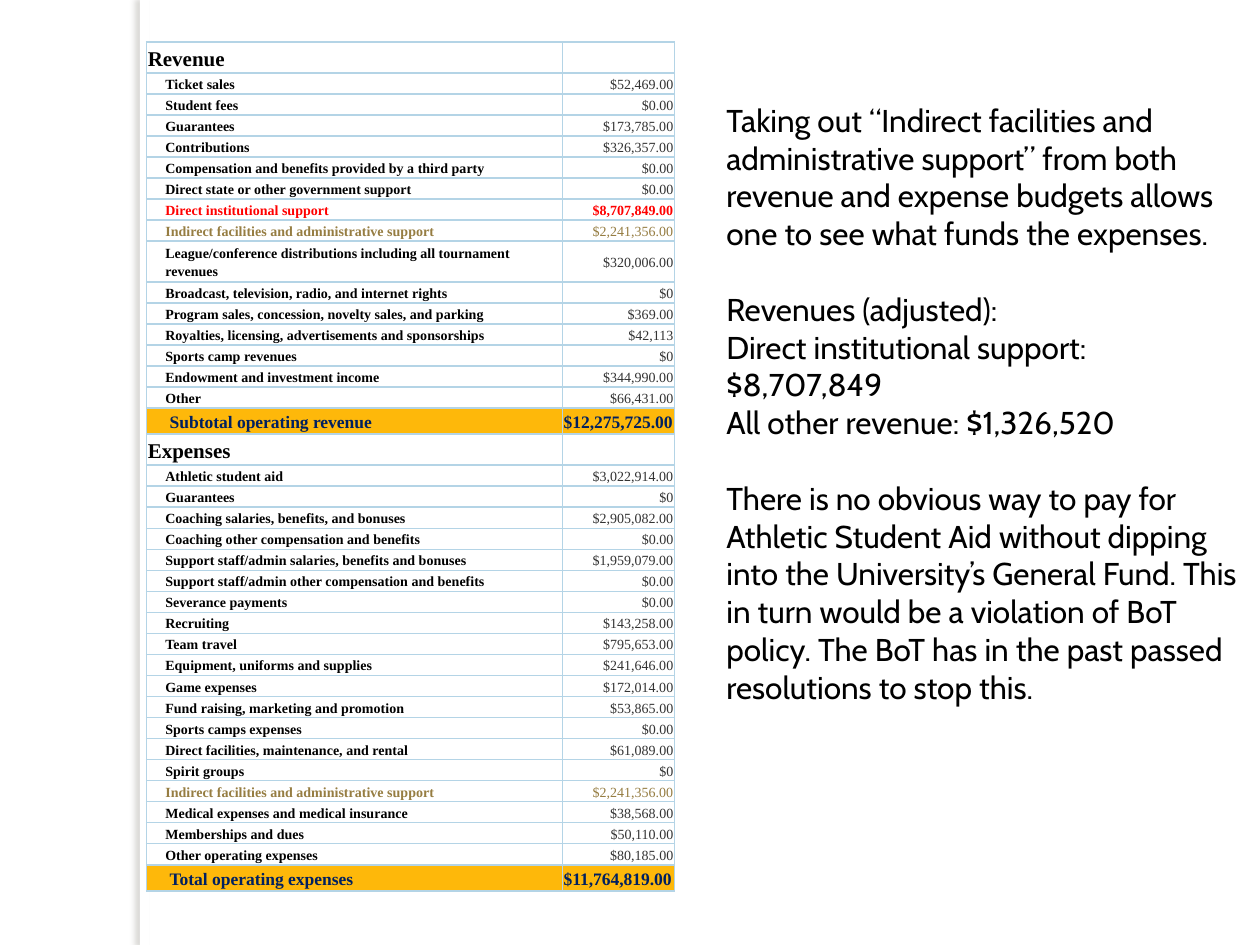
from lxml import etree
from pptx import Presentation
from pptx.dml.color import RGBColor
from pptx.enum.shapes import MSO_SHAPE
from pptx.enum.text import MSO_ANCHOR, PP_ALIGN
from pptx.oxml import parse_xml
from pptx.oxml.ns import qn
from pptx.util import Pt

RECTANGLE = MSO_SHAPE.RECTANGLE
MIDDLE = MSO_ANCHOR.MIDDLE
LEFT, RIGHT = PP_ALIGN.LEFT, PP_ALIGN.RIGHT

WHITE = RGBColor(0xFF, 0xFF, 0xFF)
BLACK = RGBColor(0, 0, 0)
GRAY = RGBColor(0x33, 0x33, 0x33)
RED = RGBColor(0xFF, 0, 0)
TAN = RGBColor(0x96, 0x7D, 0x42)
NAVY = RGBColor(0, 0x20, 0x60)
GOLD = RGBColor(0xFE, 0xB8, 0x0A)
PALE_BLUE = RGBColor(0xB4, 0xD4, 0xE6)
SHADOW = RGBColor(0x73, 0x6F, 0x63)
DRAWING_NS = "http://schemas.openxmlformats.org/drawingml/2006/main"

DIRECT = "Direct institutional support"
INDIRECT = "Indirect facilities and administrative support"

# Each section: heading, items, total
SECTIONS = [
    ("Revenue", [
        ("Ticket sales", "$52,469.00"),
        ("Student fees", "$0.00"),
        ("Guarantees", "$173,785.00"),
        ("Contributions", "$326,357.00"),
        ("Compensation and benefits provided by a third party", "$0.00"),
        ("Direct state or other government support", "$0.00"),
        (DIRECT, "$8,707,849.00"),
        (INDIRECT, "$2,241,356.00"),
        ("League/conference distributions including all tournament\nrevenues", "$320,006.00"),
        ("Broadcast, television, radio, and internet rights", "$0"),
        ("Program sales, concession, novelty sales, and parking", "$369.00"),
        ("Royalties, licensing, advertisements and sponsorships", "$42,113"),
        ("Sports camp revenues", "$0"),
        ("Endowment and investment income", "$344,990.00"),
        ("Other", "$66,431.00"),
    ], ("Subtotal operating revenue", "$12,275,725.00")),
    ("Expenses", [
        ("Athletic student aid", "$3,022,914.00"),
        ("Guarantees", "$0"),
        ("Coaching salaries, benefits, and bonuses", "$2,905,082.00"),
        ("Coaching other compensation and benefits", "$0.00"),
        ("Support staff/admin salaries, benefits and bonuses", "$1,959,079.00"),
        ("Support staff/admin other compensation and benefits", "$0.00"),
        ("Severance payments", "$0.00"),
        ("Recruiting", "$143,258.00"),
        ("Team travel", "$795,653.00"),
        ("Equipment, uniforms and supplies", "$241,646.00"),
        ("Game expenses", "$172,014.00"),
        ("Fund raising, marketing and promotion", "$53,865.00"),
        ("Sports camps expenses", "$0.00"),
        ("Direct facilities, maintenance, and rental", "$61,089.00"),
        ("Spirit groups", "$0"),
        (INDIRECT, "$2,241,356.00"),
        ("Medical expenses and medical insurance", "$38,568.00"),
        ("Memberships and dues", "$50,110.00"),
        ("Other operating expenses", "$80,185.00"),
    ], ("Total operating expenses", "$11,764,819.00")),
]

# Text and whether a gap of one line precedes it
COMMENTARY = [
    ("Taking out “Indirect facilities and administrative support” from both revenue "
     "and expense budgets allows one to see what funds the expenses.", False),
    ("Revenues (adjusted):", True),
    ("Direct institutional support: $8,707,849", False),
    ("All other revenue: $1,326,520", False),
    ("There is no obvious way to pay for Athletic Student Aid without dipping into the "
     "University’s General Fund. This in turn would be a violation of BoT policy. "
     "The BoT has in the past passed resolutions to stop this.", True),
]

TABLE_LEFT, TABLE_TOP = 83.8, 24
COLUMN_WIDTHS = (237.6, 64.1)
HEADING_HEIGHT, ITEM_HEIGHT, TALL_HEIGHT, TOTAL_HEIGHT = 17.7, 12.04, 23.3, 14.9
INSET = 0.7
COMMENTARY_LINE = 21.6


def add_run(paragraph, text, font_name, size, color, bold=False):
    run = paragraph.add_run()
    run.text = text
    run.font.name = font_name
    run.font.size = Pt(size)
    run.font.bold = bold
    run.font.color.rgb = color


def format_cell(cell, text, size, color, bold=True, align=LEFT, indent=0, fill=None):
    cell.margin_left = Pt(INSET + indent)
    cell.margin_right = cell.margin_top = cell.margin_bottom = Pt(INSET)
    cell.vertical_anchor = MIDDLE
    properties = cell._tc.get_or_add_tcPr()
    for side in ("lnL", "lnR", "lnT", "lnB"):
        line = etree.SubElement(properties, qn(f"a:{side}"), w=str(Pt(1)))
        line_fill = etree.SubElement(line, qn("a:solidFill"))
        etree.SubElement(line_fill, qn("a:srgbClr"), val=str(PALE_BLUE))
    if fill is None:
        cell.fill.background()
    else:
        cell.fill.solid()
        cell.fill.fore_color.rgb = fill
    frame = cell.text_frame
    for index, line_text in enumerate(text.split("\n")):
        paragraph = frame.add_paragraph() if index else frame.paragraphs[0]
        paragraph.alignment = align
        paragraph.line_spacing = 1.15
        if line_text:
            add_run(paragraph, line_text, "Times New Roman", size, color, bold)
        else:
            etree.SubElement(paragraph._p, qn("a:endParaRPr"), sz=str(size * 100))


def fill_section(table, first_row, heading, items, total):
    """Write one section and return the row after it."""
    table.rows[first_row].height = Pt(HEADING_HEIGHT)
    format_cell(table.cell(first_row, 0), heading, 12, BLACK)
    format_cell(table.cell(first_row, 1), "", 8, BLACK)
    for number, (label, amount) in enumerate(items, 1):
        row = first_row + number
        table.rows[row].height = Pt(TALL_HEIGHT if "\n" in label else ITEM_HEIGHT)
        accent = {DIRECT: RED, INDIRECT: TAN}.get(label)
        band = WHITE if number % 2 == 0 else None
        format_cell(table.cell(row, 0), label, 8, accent or BLACK, indent=10, fill=band)
        format_cell(table.cell(row, 1), amount, 8, accent or GRAY,
                    bold=label == DIRECT, align=RIGHT, fill=band)
    total_row = first_row + len(items) + 1
    table.rows[total_row].height = Pt(TOTAL_HEIGHT)
    for column, (text, indent) in enumerate(zip(total, (12.5, 0))):
        format_cell(table.cell(total_row, column), text, 10, NAVY, indent=indent, fill=GOLD)
    return total_row + 1


def add_side_bar(slide):
    bar = slide.shapes.add_shape(RECTANGLE, Pt(80), 0, Pt(5.5), Pt(540))
    bar.fill.solid()
    bar.fill.fore_color.rgb = WHITE
    bar.line.fill.background()
    bar._element.spPr.append(parse_xml(
        f'<a:effectLst xmlns:a="{DRAWING_NS}">'
        f'<a:outerShdw blurRad="{Pt(3)}" dist="{Pt(3)}" dir="10800000" algn="tl" rotWithShape="0">'
        f'<a:srgbClr val="{SHADOW}"><a:alpha val="25000"/></a:srgbClr>'
        '</a:outerShdw></a:effectLst>'))


def add_budget_table(slide):
    row_count = sum(len(items) + 2 for _, items, _ in SECTIONS)
    table = slide.shapes.add_table(row_count, 2, Pt(TABLE_LEFT), Pt(TABLE_TOP),
                                   Pt(sum(COLUMN_WIDTHS)), Pt(row_count * ITEM_HEIGHT)).table
    table.first_row = table.horz_banding = False
    for column, width in zip(table.columns, COLUMN_WIDTHS):
        column.width = Pt(width)
    row = 0
    for heading, items, total in SECTIONS:
        row = fill_section(table, row, heading, items, total)


def add_commentary(slide):
    frame = slide.shapes.add_textbox(Pt(408), Pt(54), Pt(312), Pt(399.6)).text_frame
    frame.word_wrap = True
    for index, (text, gap_before) in enumerate(COMMENTARY):
        paragraph = frame.add_paragraph() if index else frame.paragraphs[0]
        if gap_before:
            paragraph.space_before = Pt(COMMENTARY_LINE)
        add_run(paragraph, text, "Cabin", 18, BLACK)


def main():
    presentation = Presentation()
    presentation.slide_width, presentation.slide_height = Pt(720), Pt(540)
    slide = presentation.slides.add_slide(presentation.slide_layouts[6])
    add_side_bar(slide)
    add_budget_table(slide)
    add_commentary(slide)
    presentation.save("out.pptx")


if __name__ == "__main__":
    main()
